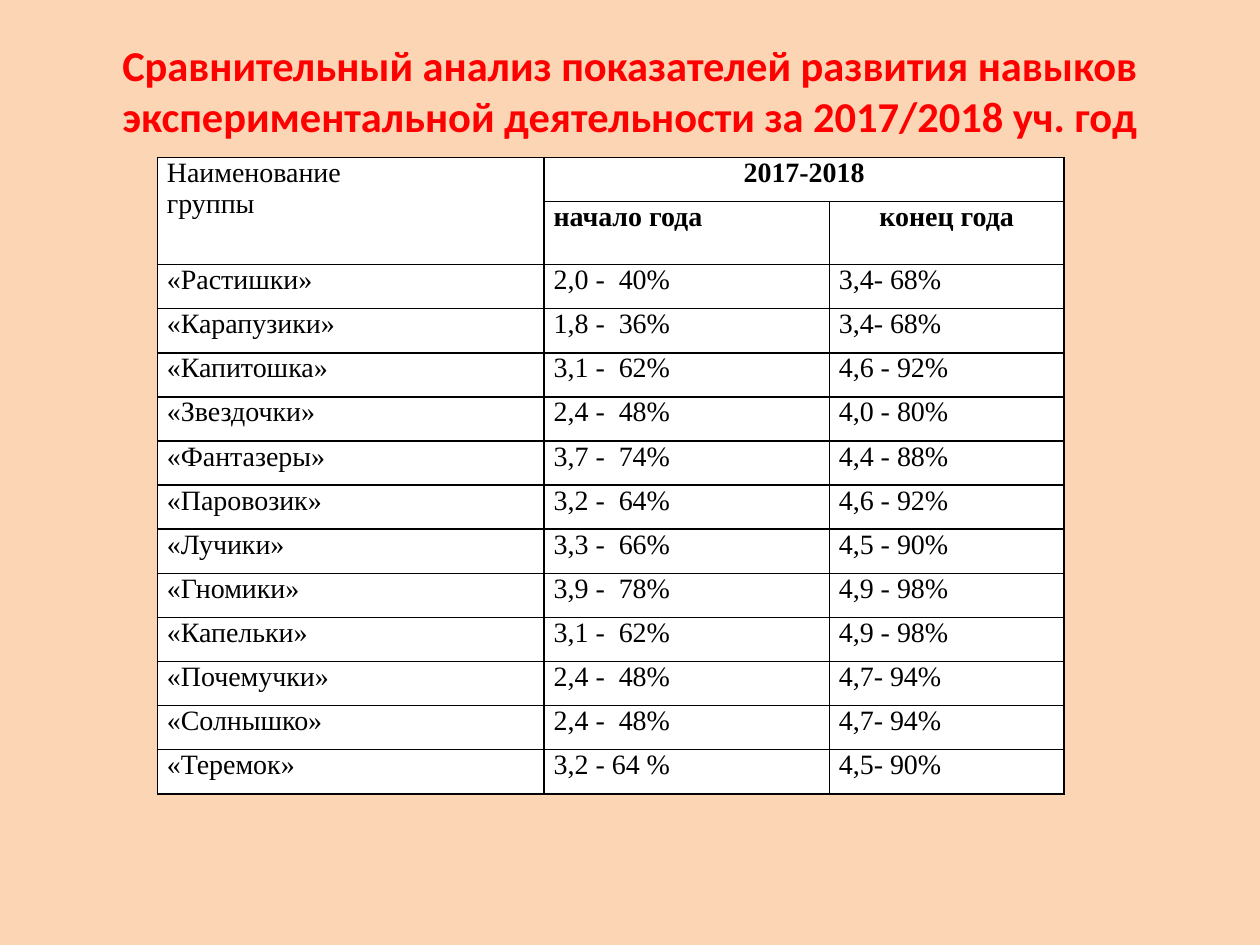
from lxml import etree
from pptx import Presentation
from pptx.dml.color import RGBColor
from pptx.enum.text import MSO_ANCHOR, MSO_AUTO_SIZE, PP_ALIGN
from pptx.oxml.ns import qn
from pptx.util import Pt

LEFT, CENTER = PP_ALIGN.LEFT, PP_ALIGN.CENTER
MIDDLE = MSO_ANCHOR.MIDDLE
NO_AUTOFIT = MSO_AUTO_SIZE.NONE
TITLE_ONLY = 5

TITLE = ("Сравнительный анализ показателей развития навыков "
         "экспериментальной деятельности за 2017/2018 уч. год")
HEADER = [
    ("Наименование\nгруппы", "2017-2018", ""),
    ("", "начало года", "конец года"),
]
GROUPS = [
    ("«Растишки»", "2,0 -  40%", "3,4- 68%"),
    ("«Карапузики»", "1,8 -  36%", "3,4- 68%"),
    ("«Капитошка»", "3,1 -  62%", "4,6 - 92%"),
    ("«Звездочки»", "2,4 -  48%", "4,0 - 80%"),
    ("«Фантазеры»", "3,7 -  74%", "4,4 - 88%"),
    ("«Паровозик»", "3,2 -  64%", "4,6 - 92%"),
    ("«Лучики»", "3,3 -  66%", "4,5 - 90%"),
    ("«Гномики»", "3,9 -  78%", "4,9 - 98%"),
    ("«Капельки»", "3,1 -  62%", "4,9 - 98%"),
    ("«Почемучки»", "2,4 -  48%", "4,7- 94%"),
    ("«Солнышко»", "2,4 -  48%", "4,7- 94%"),
    ("«Теремок»", "3,2 - 64 %", "4,5- 90%"),
]
CENTERED = {"2017-2018", "конец года"}
COLUMN_WIDTHS = (221, 163, 134)
ROW_HEIGHT, SUBHEADER_HEIGHT = 25.2, 36
TABLE_LEFT, TABLE_TOP = 90, 90

BACKGROUND, BLACK, WHITE, RED = "FCD5B5", "000000", "FFFFFF", "FF0000"
TITLE_FONT = {"name": "Calibri", "size": Pt(24.3), "bold": True}
CELL_FONT = {"name": "Times New Roman", "size": Pt(16)}
TITLE_BOX = {"left": Pt(36), "top": Pt(21.6), "width": Pt(648), "height": Pt(60)}
TITLE_FRAME = {"auto_size": NO_AUTOFIT, "word_wrap": True, "vertical_anchor": MIDDLE,
               "margin_top": 0, "margin_bottom": 0}
CELL_MARGINS = {"margin_left": Pt(5.4), "margin_right": Pt(5.4),
                "margin_top": 0, "margin_bottom": 0}


def set_values(target, values):
    for name, value in values.items():
        setattr(target, name, value)


def set_color(color_format, color):
    color_format.rgb = RGBColor.from_string(color)


def set_fill(fill, color):
    fill.solid()
    set_color(fill.fore_color, color)


def write_text(text_frame, text, font, color, alignment):
    text_frame.text = text
    for paragraph in text_frame.paragraphs:
        paragraph.alignment = alignment
        for run in paragraph.runs:
            set_values(run.font, font)
            set_color(run.font.color, color)


def add_borders(cell, color, width):
    properties = cell._tc.get_or_add_tcPr()
    for side in ("lnL", "lnR", "lnT", "lnB"):
        line = etree.SubElement(properties, qn(f"a:{side}"), w=str(Pt(width)))
        solid = etree.SubElement(line, qn("a:solidFill"))
        etree.SubElement(solid, qn("a:srgbClr"), val=color)


def add_title(slide):
    title = slide.shapes.title
    set_values(title, TITLE_BOX)
    set_values(title.text_frame, TITLE_FRAME)
    write_text(title.text_frame, TITLE, TITLE_FONT, RED, CENTER)


def add_results_table(slide):
    rows = HEADER + GROUPS
    heights = [ROW_HEIGHT] * len(rows)
    heights[1] = SUBHEADER_HEIGHT
    table = slide.shapes.add_table(
        len(rows), len(COLUMN_WIDTHS), Pt(TABLE_LEFT), Pt(TABLE_TOP),
        Pt(sum(COLUMN_WIDTHS)), Pt(sum(heights))).table
    for column, width in zip(table.columns, COLUMN_WIDTHS):
        column.width = Pt(width)
    for row_index, (texts, height) in enumerate(zip(rows, heights)):
        table.rows[row_index].height = Pt(height)
        for column_index, text in enumerate(texts):
            cell = table.cell(row_index, column_index)
            set_values(cell, CELL_MARGINS)
            add_borders(cell, BLACK, 1)
            set_fill(cell.fill, WHITE)
            bold = row_index < len(HEADER) and column_index > 0
            alignment = CENTER if text in CENTERED else LEFT
            write_text(cell.text_frame, text, {**CELL_FONT, "bold": bold}, BLACK, alignment)
    table.cell(0, 0).merge(table.cell(1, 0))
    table.cell(0, 1).merge(table.cell(0, 2))


def main():
    presentation = Presentation()
    set_values(presentation, {"slide_width": Pt(720), "slide_height": Pt(540)})
    slide = presentation.slides.add_slide(presentation.slide_layouts[TITLE_ONLY])
    set_fill(slide.background.fill, BACKGROUND)
    add_title(slide)
    add_results_table(slide)
    presentation.save("out.pptx")


if __name__ == "__main__":
    main()
